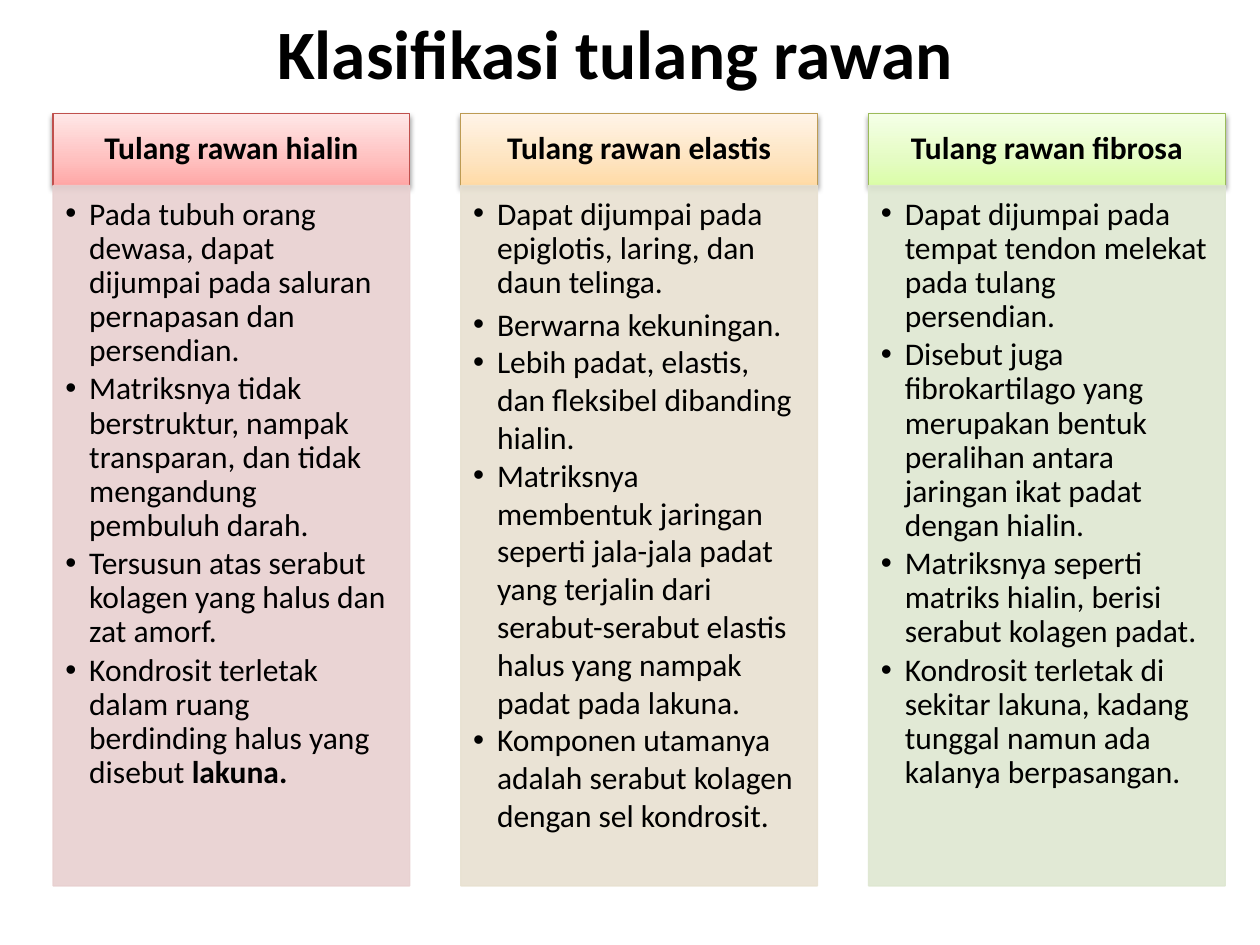
from dataclasses import dataclass

from lxml import etree
from pptx import Presentation
from pptx.dml.color import RGBColor
from pptx.enum.shapes import MSO_SHAPE
from pptx.enum.text import MSO_ANCHOR, MSO_AUTO_SIZE, PP_ALIGN
from pptx.oxml.ns import qn
from pptx.util import Cm, Pt

RECTANGLE = MSO_SHAPE.RECTANGLE
TOP, MIDDLE = MSO_ANCHOR.TOP, MSO_ANCHOR.MIDDLE
LEFT, CENTER = PP_ALIGN.LEFT, PP_ALIGN.CENTER
NO_AUTOFIT = MSO_AUTO_SIZE.NONE
TITLE_ONLY = 5


@dataclass(frozen=True)
class Theme:
    font: str = "Calibri"
    text: str = "000000"
    title_size: float = 39.6
    text_size: float = 18
    line_width: float = 0.75
    body_opacity: int = 90
    shadow_opacity: int = 38


@dataclass(frozen=True)
class Box:
    left: float
    top: float
    width: float
    height: float

    def lengths(self):
        return Cm(self.left), Cm(self.top), Cm(self.width), Cm(self.height)


@dataclass(frozen=True)
class Cartilage:
    name: str
    gradient: tuple  # colours at 0, 35 and 100 %, from the bottom up
    outline: str
    tint: str
    points: tuple  # each point is a tuple of (text, bold) spans
    tight: int  # number of leading points set with tight line spacing


THEME = Theme()
TITLE_BOX = Box(4.29, 0.15, 16.23, 1.78)
COLUMNS_BOX = Box(1.07, 2.29, 23.63, 15.57)
COLUMN_WIDTH = 7.19
HEADER_HEIGHT = 1.45

CARTILAGES = (
    Cartilage(
        "Tulang rawan hialin", ("FFA6A5", "FFC0BF", "FFE7E7"), "C0504D", "E8D0D0",
        (
            (("Pada tubuh orang dewasa, dapat dijumpai pada saluran pernapasan "
              "dan persendian.", False),),
            (("Matriksnya tidak berstruktur, nampak transparan, dan tidak "
              "mengandung pembuluh darah.", False),),
            (("Tersusun atas serabut kolagen yang halus dan zat amorf.", False),),
            (("Kondrosit terletak dalam ruang berdinding halus yang disebut ", False),
             ("lakuna.", True)),
        ), 4),
    Cartilage(
        "Tulang rawan elastis", ("FFDAA5", "FEE4C0", "FFF4E7"), "BD9B53", "E8E1D1",
        (
            (("Dapat dijumpai pada epiglotis, laring, dan daun telinga.", False),),
            (("Berwarna kekuningan.", False),),
            (("Lebih padat, elastis, dan fleksibel dibanding hialin.", False),),
            (("Matriksnya membentuk jaringan seperti jala-jala padat yang terjalin "
              "dari serabut-serabut elastis halus yang nampak padat pada lakuna.",
              False),),
            (("Komponen utamanya adalah serabut kolagen dengan sel kondrosit.",
              False),),
        ), 1),
    Cartilage(
        "Tulang rawan fibrosa", ("DAFDA7", "E4FCC2", "F5FFE7"), "9BBB59", "DEE7D1",
        (
            (("Dapat dijumpai pada tempat tendon melekat pada tulang persendian.",
              False),),
            (("Disebut juga fibrokartilago yang merupakan bentuk peralihan antara "
              "jaringan ikat padat dengan hialin.", False),),
            (("Matriksnya seperti matriks hialin, berisi serabut kolagen padat.",
              False),),
            (("Kondrosit terletak di sekitar lakuna, kadang tunggal namun ada "
              "kalanya berpasangan.", False),),
        ), 4),
)


def add_node(parent, tag, **attributes):
    return etree.SubElement(parent, qn(tag), {k: str(v) for k, v in attributes.items()})


def add_span(para, text, size, bold=False):
    span = para.add_run()
    span.text = text
    span.font.name = THEME.font
    span.font.size = Pt(size)
    span.font.bold = bold
    span.font.color.rgb = RGBColor.from_string(THEME.text)


def add_panel(shapes, box, outline, anchor, margins):
    """Add an outlined rectangle, ready for text, with margins in left-top-right-bottom order."""
    panel = shapes.add_shape(RECTANGLE, *box.lengths())
    panel.shadow.inherit = False
    panel.line.color.rgb = RGBColor.from_string(outline)
    panel.line.width = Pt(THEME.line_width)
    frame = panel.text_frame
    frame.word_wrap = True
    frame.vertical_anchor = anchor
    (frame.margin_left, frame.margin_top,
     frame.margin_right, frame.margin_bottom) = map(Cm, margins)
    return panel


def fill_upward(panel, colours):
    panel.fill.gradient()
    panel.fill.gradient_angle = 90
    stops = next(panel.element.spPr.iter(qn("a:gsLst")))
    for stop in list(stops):
        stops.remove(stop)
    for percent, colour in zip((0, 35, 100), colours):
        stop = add_node(stops, "a:gs", pos=percent * 1000)
        add_node(stop, "a:srgbClr", val=colour)


def add_soft_shadow(panel):
    effects = panel.element.spPr.find(qn("a:effectLst"))
    shadow = add_node(effects, "a:outerShdw", blurRad=Pt(3.1), dist=Pt(1.6),
                      dir=90 * 60000, rotWithShape=0)
    colour = add_node(shadow, "a:srgbClr", val=THEME.text)
    add_node(colour, "a:alpha", val=THEME.shadow_opacity * 1000)


def add_bullet(para, indent):
    properties = para._p.get_or_add_pPr()
    properties.set("marL", str(indent))
    properties.set("indent", str(-indent))
    add_node(properties, "a:buFont", typeface="Arial")
    add_node(properties, "a:buChar", char="•")


def add_header(shapes, box, cartilage):
    header = add_panel(shapes, box, cartilage.outline, MIDDLE, (0.36, 0.2, 0.36, 0.2))
    fill_upward(header, cartilage.gradient)
    add_soft_shadow(header)
    para = header.text_frame.paragraphs[0]
    para.alignment = CENTER
    para.line_spacing = 0.9
    add_span(para, cartilage.name, THEME.text_size, bold=True)


def add_body(shapes, box, cartilage):
    body = add_panel(shapes, box, cartilage.tint, TOP, (0.25, 0.25, 0.36, 0.41))
    body.fill.solid()
    body.fill.fore_color.rgb = RGBColor.from_string(cartilage.tint)
    for colour in body.element.spPr.iter(qn("a:srgbClr")):
        add_node(colour, "a:alpha", val=THEME.body_opacity * 1000)
    frame = body.text_frame
    for index, point in enumerate(cartilage.points):
        para = frame.add_paragraph() if index else frame.paragraphs[0]
        para.alignment = LEFT
        if index < cartilage.tight:
            para.line_spacing = 0.9
            para.space_after = Pt(0.15 * THEME.text_size)
        add_bullet(para, Cm(0.48))
        for text, bold in point:
            add_span(para, text, THEME.text_size, bold)


def add_columns(page, box, cartilages):
    shapes = page.shapes.add_group_shape().shapes
    pitch = (box.width - COLUMN_WIDTH) / (len(cartilages) - 1)
    for index, cartilage in enumerate(cartilages):
        left = box.left + index * pitch
        add_header(shapes, Box(left, box.top, COLUMN_WIDTH, HEADER_HEIGHT), cartilage)
        add_body(shapes, Box(left, box.top + HEADER_HEIGHT, COLUMN_WIDTH,
                             box.height - HEADER_HEIGHT), cartilage)


def set_title(page, box, text):
    title = page.shapes.title
    title.left, title.top, title.width, title.height = box.lengths()
    frame = title.text_frame
    frame.auto_size = NO_AUTOFIT
    frame.vertical_anchor = MIDDLE
    para = frame.paragraphs[0]
    para.alignment = CENTER
    add_span(para, text, THEME.title_size, bold=True)


def main():
    deck = Presentation()
    deck.slide_width, deck.slide_height = Cm(25.4), Cm(19.05)
    page = deck.slides.add_slide(deck.slide_layouts[TITLE_ONLY])
    set_title(page, TITLE_BOX, "Klasifikasi tulang rawan")
    add_columns(page, COLUMNS_BOX, CARTILAGES)
    deck.save("out.pptx")


if __name__ == "__main__":
    main()
